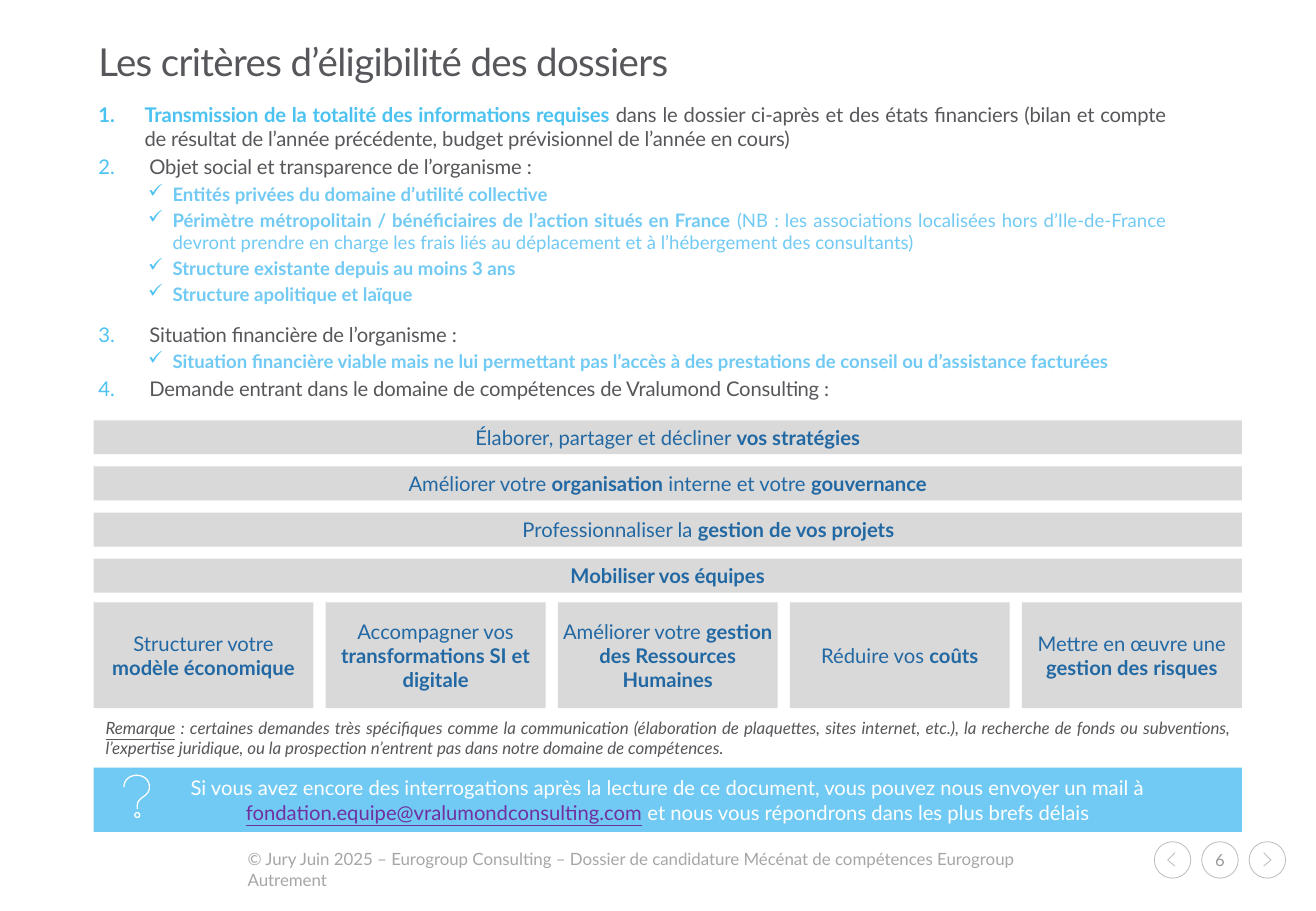
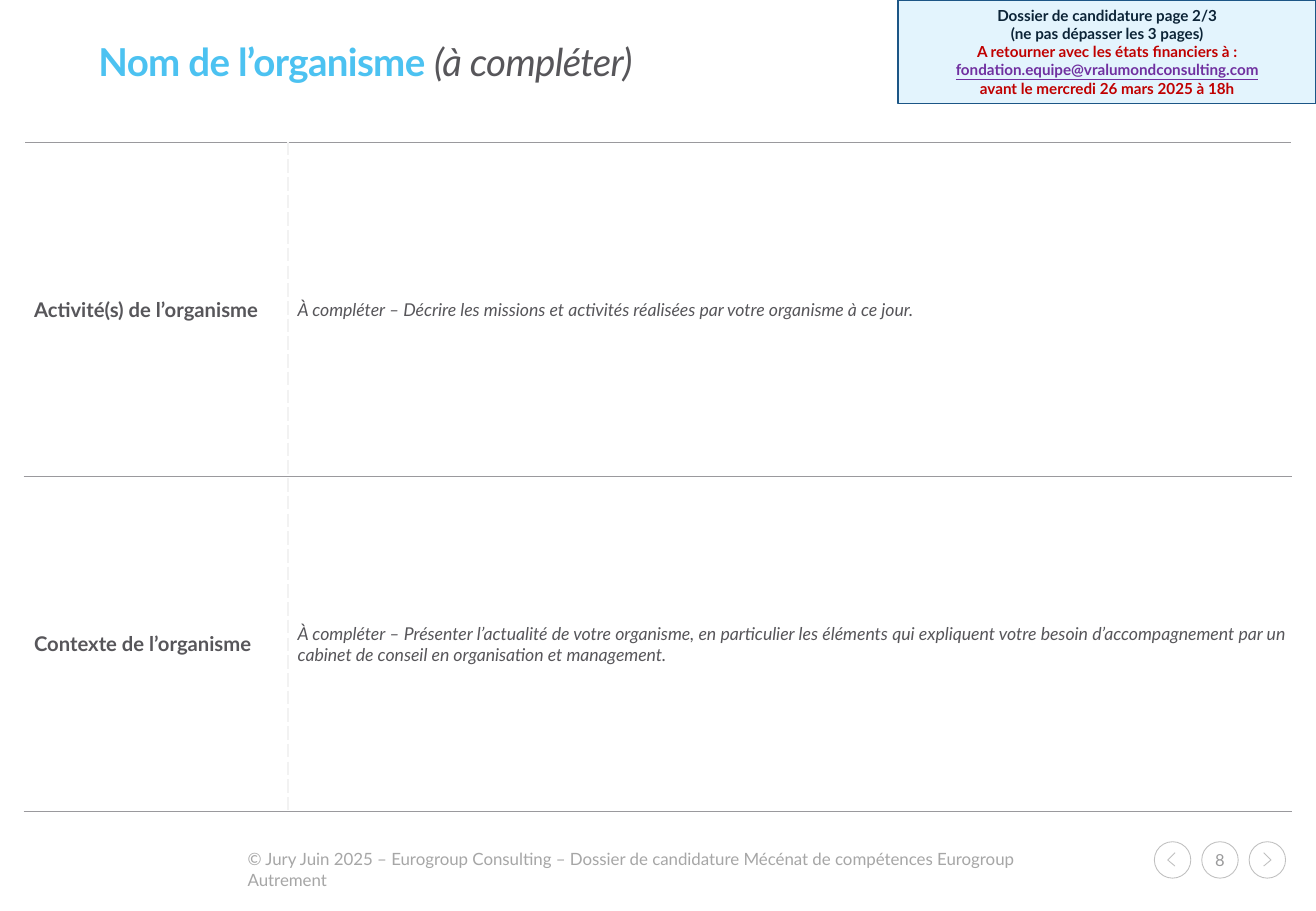
from dataclasses import dataclass

from lxml import etree
from pptx import Presentation
from pptx.dml.color import RGBColor
from pptx.enum.shapes import MSO_SHAPE
from pptx.enum.text import MSO_ANCHOR, PP_ALIGN
from pptx.oxml.ns import qn
from pptx.util import Inches, Pt

RECT, OVAL = MSO_SHAPE.RECTANGLE, MSO_SHAPE.OVAL
TOP, MIDDLE = MSO_ANCHOR.TOP, MSO_ANCHOR.MIDDLE
LEFT, CENTER, JUSTIFY = PP_ALIGN.LEFT, PP_ALIGN.CENTER, PP_ALIGN.JUSTIFY


@dataclass(frozen=True)
class Theme:
    font: str = "Lato"
    text: str = "57565A"
    accent: str = "4CC2F1"
    sky: str = "71CAF3"
    blue: str = "2268A3"
    panel: str = "D9D9D9"
    white: str = "FFFFFF"
    link: str = "7030A0"
    alert: str = "C00000"
    navy: str = "0C2437"
    notice_fill: str = "E3F4FD"
    notice_line: str = "1C5686"
    footer: str = "A6A6A6"
    number: str = "9A9A9B"
    outline: str = "BFBFBF"
    rule: str = "9A999D"
    dash: str = "F2F2F2"
    title_size: float = 22.8
    body_size: float = 12
    detail_size: float = 11
    answer_size: float = 10.5
    small_size: float = 10
    number_size: float = 9.8
    notice_size: float = 9


THEME = Theme()
BOLD = {"bold": True}
LINK = {"color": THEME.link, "underline": True}

# Content: a run is a string, or a string with its own style
EMAIL = "fondation.equipe@vralumondconsulting.com"
FOOTER = ("© Jury Juin 2025 – Eurogroup Consulting – Dossier de candidature "
          "Mécénat de compétences Eurogroup Autrement")
CRITERIA_TITLE = ["Les critères d’éligibilité des dossiers"]
FORM_TITLE = [("Nom de l’organisme ", {"bold": True, "color": THEME.accent}),
              ("(à compléter)", {"italic": True})]

# Each criterion: runs, then its checked details
CRITERIA = [
    ([("Transmission de la totalité des informations requises ",
       {"bold": True, "color": THEME.accent}),
      "dans le dossier ci-après et des états financiers (bilan et compte de résultat "
      "de l’année précédente, budget prévisionnel de l’année en cours)"], []),
    (["Objet social et transparence de l’organisme\u00a0:"], [
        [("Entités privées du domaine d’utilité collective", BOLD)],
        [("Périmètre métropolitain / bénéficiaires de l’action situés en France ", BOLD),
         "(NB : les associations localisées hors d’Ile-de-France devront prendre en charge "
         "les frais liés au déplacement et à l’hébergement des consultants)"],
        [("Structure existante depuis au moins 3 ans", BOLD)],
        [("Structure apolitique et laïque", BOLD)],
    ]),
    (["Situation financière de l’organisme\u00a0:"], [
        [("Situation financière viable mais ne lui permettant pas l’accès à des prestations "
          "de conseil ou d’assistance facturées", BOLD)],
    ]),
    (["Demande entrant dans le domaine de compétences de Vralumond Consulting :"], []),
]
CRITERION_INDENTS = [0.38, 0.42, 0.42, 0.42]
CRITERION_GAPS = [0, 2.4, 10, 2.4]

# Each skill band: runs, left indent
SKILL_BANDS = [
    (["Élaborer, partager et décliner ", ("vos stratégies", BOLD)], 0),
    (["Améliorer votre ", ("organisation", BOLD), " interne et votre ",
      ("gouvernance", BOLD)], 0),
    (["Professionnaliser la ", ("gestion de vos projets", BOLD)], 0.67),
    ([("Mobiliser vos équipes", BOLD)], 0),
]
SKILL_CARDS = [
    ["Structurer votre ", ("modèle économique", BOLD)],
    ["Accompagner vos ", ("transformations SI et digitale", BOLD)],
    ["Améliorer votre ", ("gestion des Ressources Humaines", BOLD)],
    ["Réduire vos ", ("coûts", BOLD)],
    ["Mettre en œuvre une ", ("gestion des risques", BOLD)],
]
REMARK = [("Remarque", {"underline": True}),
          " : certaines demandes très spécifiques comme la communication (élaboration de "
          "plaquettes, sites internet, etc.), la recherche de fonds ou subventions, "
          "l’expertise juridique, ou la prospection n’entrent pas dans notre domaine de "
          "compétences."]
CONTACT = ["Si vous avez encore des interrogations après la lecture de ce document, "
           "vous pouvez nous envoyer un mail à ", (EMAIL, LINK),
           " et nous vous répondrons dans les plus brefs délais"]
NOTICE = [
    ["Dossier de candidature page 2/3"],
    ["(ne pas dépasser les 3 pages)"],
    [("A retourner avec les états financiers à :", {"color": THEME.alert})],
    [(EMAIL, LINK)],
    [("avant le mercredi 26 mars 2025 à 18h", {"color": THEME.alert})],
]
FORM_ROWS = [
    ("Activité(s) de l’organisme",
     "À compléter – Décrire les missions et activités réalisées par votre organisme à ce jour."),
    ("Contexte de l’organisme",
     "À compléter – Présenter l’actualité de votre organisme, en particulier les éléments qui "
     "expliquent votre besoin d’accompagnement par un cabinet de conseil en organisation et "
     "management."),
]


# Text helpers
def style(font, color=None, **flags):
    if color:
        font.color.rgb = RGBColor.from_string(color)
    for name, value in flags.items():
        setattr(font, name, value)


def write(para, runs, size, color, align=LEFT, tracking=0, **flags):
    para.alignment = align
    style(para.font, color, name=THEME.font, size=Pt(size), **flags)
    for run in runs:
        text, own = (run, {}) if isinstance(run, str) else run
        span = para.add_run()
        span.text = text
        style(span.font, **own)
        if tracking:
            span._r.get_or_add_rPr().set("spc", str(tracking))


def set_indent(para, left, hanging=0):
    properties = para._p.get_or_add_pPr()
    properties.set("marL", str(Inches(left)))
    properties.set("indent", str(-Inches(hanging)))
    return properties


def add_bullet(para, left, hanging, number=None):
    properties = set_indent(para, left, hanging)
    color = etree.SubElement(properties, qn("a:buClr"))
    etree.SubElement(color, qn("a:srgbClr"), val=THEME.accent)
    if number:
        etree.SubElement(properties, qn("a:buAutoNum"), type="arabicPeriod",
                         startAt=str(number))
    else:
        etree.SubElement(properties, qn("a:buChar"), char="✓")


def set_frame(frame, anchor, inset):
    frame.word_wrap = True
    frame.vertical_anchor = anchor
    if inset is not None:
        frame.margin_left = frame.margin_right = Inches(inset)
        frame.margin_top = frame.margin_bottom = Inches(inset)
    return frame


def add_text(page, area, anchor=TOP, inset=None):
    box = page.shapes.add_textbox(*map(Inches, area))
    return set_frame(box.text_frame, anchor, inset)


# Shape helpers
def paint(shape, fill=None, line=None, width=0.5):
    shape.shadow.inherit = False
    if fill:
        shape.fill.solid()
        shape.fill.fore_color.rgb = RGBColor.from_string(fill)
    else:
        shape.fill.background()
    if line:
        shape.line.color.rgb = RGBColor.from_string(line)
        shape.line.width = Pt(width)
    else:
        shape.line.fill.background()


def add_shape(page, kind, area, fill=None, line=None, width=0.5, inset=None):
    shape = page.shapes.add_shape(kind, *map(Inches, area))
    paint(shape, fill, line, width)
    return set_frame(shape.text_frame, MIDDLE, inset)


def add_stroke(page, points, color, width):
    start, *rest = [(Inches(x), Inches(y)) for x, y in points]
    builder = page.shapes.build_freeform(*start)
    builder.add_line_segments(rest, close=False)
    paint(builder.convert_to_shape(), line=color, width=width)


def curve(start, first, second, end, steps=16):
    for step in range(steps + 1):
        t = step / steps
        weights = ((1 - t) ** 3, 3 * t * (1 - t) ** 2, 3 * t * t * (1 - t), t ** 3)
        yield tuple(sum(w * p[axis] for w, p in zip(weights, (start, first, second, end)))
                    for axis in (0, 1))


def add_question_mark(page):
    bowl = curve((1.02, 6.48), (1.02, 6.35), (1.23, 6.35), (1.23, 6.48))
    neck = curve((1.23, 6.48), (1.23, 6.56), (1.13, 6.56), (1.13, 6.63))
    add_stroke(page, [*bowl, *neck, (1.13, 6.66)], THEME.white, 0.75)
    add_shape(page, OVAL, (1.11, 6.69, 0.04, 0.04), line=THEME.white, width=0.75)


def set_borders(cell, borders):
    properties = cell._tc.get_or_add_tcPr()
    for index, (side, color, width, dash) in enumerate(borders):
        line = etree.Element(qn("a:" + side), w=str(Pt(width)))
        fill = etree.SubElement(line, qn("a:solidFill"))
        etree.SubElement(fill, qn("a:srgbClr"), val=color)
        etree.SubElement(line, qn("a:prstDash"), val=dash)
        properties.insert(index, line)


# Shared frame: title, footer and page navigation
def add_page(deck, title, number):
    page = deck.slides.add_slide(deck.slide_layouts[6])
    para = add_text(page, (0.81, 0.35, 9.21, 0.37), MIDDLE, 0).paragraphs[0]
    para.line_spacing = 0.86
    write(para, title, THEME.title_size, THEME.text, tracking=-40)
    footer = add_text(page, (1.94, 6.94, 6.96, 0.27))
    write(footer.paragraphs[0], [FOOTER], THEME.small_size, THEME.footer)
    previous, current, following = [
        add_shape(page, OVAL, (9.5 + 0.39 * i, 6.93, 0.3, 0.3), line=THEME.outline, inset=0)
        for i in range(3)]
    write(current.paragraphs[0], [str(number)], THEME.number_size, THEME.number, CENTER)
    for base, tip in ((9.67, 9.61), (10.4, 10.46)):
        add_stroke(page, [(base, 7.02), (tip, 7.08), (base, 7.13)], THEME.outline, 0.5)
    return page


def add_criteria(page):
    frame = add_text(page, (0.81, 0.84, 8.79, 2.67), inset=0)
    rows = zip(CRITERIA, CRITERION_INDENTS, CRITERION_GAPS)
    for number, ((runs, details), indent, gap) in enumerate(rows, 1):
        para = frame.paragraphs[0] if number == 1 else frame.add_paragraph()
        add_bullet(para, indent, indent, number)
        if gap:
            para.space_before = Pt(gap)
        write(para, runs, THEME.body_size, THEME.text, JUSTIFY, tracking=-10)
        for detail in details:
            para = frame.add_paragraph()
            add_bullet(para, 0.61, 0.2)
            para.space_before = Pt(2.2)
            write(para, detail, THEME.detail_size, THEME.sky, JUSTIFY)


def add_skills(page):
    panels = [((0.77, 3.46 + 0.38 * i, 9.45, 0.28), runs, indent)
              for i, (runs, indent) in enumerate(SKILL_BANDS)]
    panels += [((0.77 + 1.91 * i, 4.96, 1.81, 0.87), runs, 0)
               for i, runs in enumerate(SKILL_CARDS)]
    for area, runs, indent in panels:
        para = add_shape(page, RECT, area, THEME.panel, inset=0.04).paragraphs[0]
        set_indent(para, indent)
        write(para, runs, THEME.body_size, THEME.blue, CENTER)


def add_form(page):
    table = page.shapes.add_table(len(FORM_ROWS), 2, Inches(0.2), Inches(1.17),
                                  Inches(10.43), Inches(5.51)).table
    table.first_row = table.horz_banding = False
    for column, width in zip(table.columns, (2.17, 8.26)):
        column.width = Inches(width)
    looks = [dict(size=THEME.body_size, bold=True, align=LEFT),
             dict(size=THEME.answer_size, italic=True, align=JUSTIFY)]
    rules = [(side, THEME.rule, 0.75, "solid") for side in ("lnT", "lnB")]
    for r, row in enumerate(FORM_ROWS):
        for c, text in enumerate(row):
            cell = table.cell(r, c)
            cell.fill.solid()
            cell.fill.fore_color.rgb = RGBColor.from_string(THEME.white)
            cell.vertical_anchor = MIDDLE
            cell.margin_left = Inches(0.08)
            cell.margin_right = cell.margin_top = cell.margin_bottom = Inches(0.04)
            divider = ("lnL" if c else "lnR", THEME.dash, 1, "sysDash")
            set_borders(cell, [divider, *rules])
            write(cell.text_frame.paragraphs[0], [text], color=THEME.text, **looks[c])


def main():
    deck = Presentation()
    deck.slide_width, deck.slide_height = Inches(10.83), Inches(7.5)

    # Eligibility criteria
    page = add_page(deck, CRITERIA_TITLE, 6)
    add_criteria(page)
    add_skills(page)
    remark = add_text(page, (0.77, 5.86, 9.45, 0.48))
    write(remark.paragraphs[0], REMARK, THEME.small_size, THEME.text, JUSTIFY, italic=True)
    contact = add_shape(page, RECT, (0.77, 6.32, 9.45, 0.53), THEME.sky)
    write(contact.paragraphs[0], CONTACT, THEME.body_size, THEME.white, CENTER)
    add_question_mark(page)

    # Application form
    page = add_page(deck, FORM_TITLE, 8)
    add_form(page)
    notice = add_shape(page, RECT, (7.39, 0, 3.44, 0.85), THEME.notice_fill,
                       THEME.notice_line, 0.75)
    for i, runs in enumerate(NOTICE):
        para = notice.add_paragraph() if i else notice.paragraphs[0]
        write(para, runs, THEME.notice_size, THEME.navy, CENTER, bold=True)

    deck.save("out.pptx")


if __name__ == "__main__":
    main()
